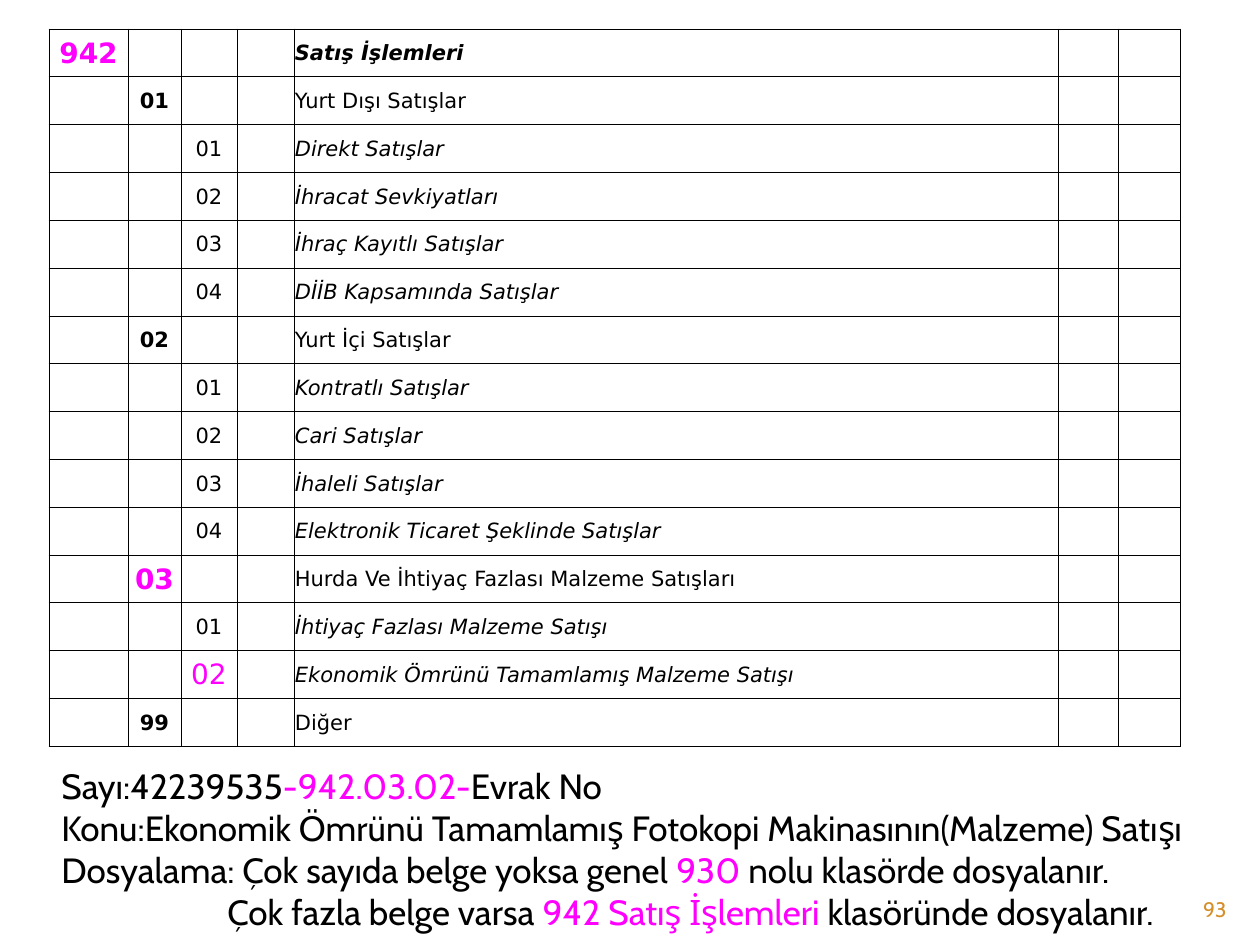
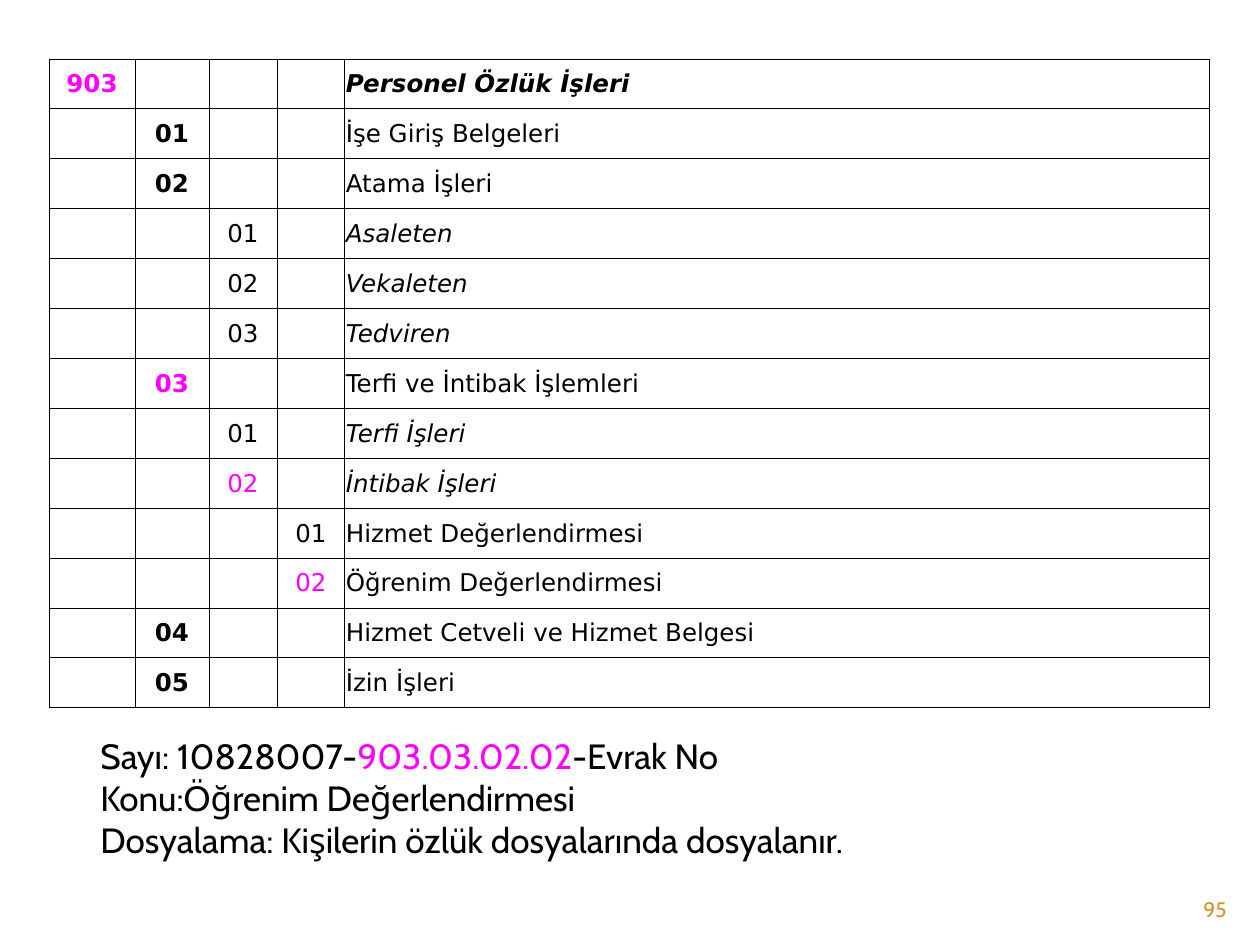
from dataclasses import dataclass

from lxml import etree
from pptx import Presentation
from pptx import util as u
from pptx.dml import color
from pptx.enum import text
from pptx.oxml import ns

EMU_PER_PX = u.Inches(1) / 126


@dataclass(frozen=True)
class Theme:
    ink: str = "000000"
    accent: str = "FF00FF"
    paper: str = "FFFFFF"
    number: str = "D48F29"
    table_font: str = "DejaVu Sans"
    text_font: str = "Cabin"
    note_size: int = 20
    number_size: int = 12
    border: float = 0.5


@dataclass(frozen=True)
class Area:
    left: int
    top: int
    width: int
    height: int


@dataclass(frozen=True)
class Entry:
    level: int
    code: str
    label: str
    marked: bool = False


@dataclass(frozen=True)
class FilePlan:
    left: int
    top: int
    height: int
    columns: tuple[int, ...]
    size: int
    marked_size: int
    entries: tuple[Entry, ...]


@dataclass(frozen=True)
class Span:
    words: str
    marked: bool = False


@dataclass(frozen=True)
class Line:
    spans: tuple[Span, ...]
    indent: int = 0


@dataclass(frozen=True)
class Sheet:
    number: int
    plan: FilePlan
    note_area: Area
    notes: tuple[Line, ...]


THEME = Theme()
NUMBER_AREA = Area(1134, 892, 105, 34)
LABEL_COLUMN = 4

SHEETS = (
    Sheet(
        93,
        FilePlan(49, 29, 718, (79, 53, 56, 57, 764, 61, 62), 12, 16, (
            Entry(0, "942", "Satış İşlemleri", True),
            Entry(1, "01", "Yurt Dışı Satışlar"),
            Entry(2, "01", "Direkt Satışlar"),
            Entry(2, "02", "İhracat Sevkiyatları"),
            Entry(2, "03", "İhraç Kayıtlı Satışlar"),
            Entry(2, "04", "DİİB Kapsamında Satışlar"),
            Entry(1, "02", "Yurt İçi Satışlar"),
            Entry(2, "01", "Kontratlı Satışlar"),
            Entry(2, "02", "Cari Satışlar"),
            Entry(2, "03", "İhaleli Satışlar"),
            Entry(2, "04", "Elektronik Ticaret Şeklinde Satışlar"),
            Entry(1, "03", "Hurda Ve İhtiyaç Fazlası Malzeme Satışları", True),
            Entry(2, "01", "İhtiyaç Fazlası Malzeme Satışı"),
            Entry(2, "02", "Ekonomik Ömrünü Tamamlamış Malzeme Satışı", True),
            Entry(1, "99", "Diğer"),
        )),
        Area(49, 758, 1172, 183),
        (
            Line((Span("Sayı:42239535"), Span("-942.03.02-", True), Span("Evrak No"))),
            Line((Span("Konu:Ekonomik Ömrünü Tamamlamış Fotokopi Makinasının(Malzeme) Satışı"),)),
            Line((Span("Dosyalama: Çok sayıda belge yoksa genel "), Span("930 ", True),
                  Span("nolu klasörde dosyalanır."))),
            Line((Span("Çok fazla belge varsa "), Span("942 Satış İşlemleri ", True),
                  Span("klasöründe dosyalanır.")), 166),
        ),
    ),
    Sheet(
        95,
        FilePlan(49, 59, 649, (86, 74, 68, 68, 865), 14, 14, (
            Entry(0, "903", "Personel Özlük İşleri", True),
            Entry(1, "01", "İşe Giriş Belgeleri"),
            Entry(1, "02", "Atama İşleri"),
            Entry(2, "01", "Asaleten"),
            Entry(2, "02", "Vekaleten"),
            Entry(2, "03", "Tedviren"),
            Entry(1, "03", "Terfi ve İntibak İşlemleri", True),
            Entry(2, "01", "Terfi İşleri"),
            Entry(2, "02", "İntibak İşleri", True),
            Entry(3, "01", "Hizmet Değerlendirmesi"),
            Entry(3, "02", "Öğrenim Değerlendirmesi", True),
            Entry(1, "04", "Hizmet Cetveli ve Hizmet Belgesi"),
            Entry(1, "05", "İzin İşleri"),
        )),
        Area(88, 728, 1033, 140),
        (
            Line((Span("Sayı: 10828007-"), Span("903.03.02.02", True), Span("-Evrak No"))),
            Line((Span("Konu:Öğrenim Değerlendirmesi"),)),
            Line((Span("Dosyalama: Kişilerin özlük dosyalarında dosyalanır."),)),
        ),
    ),
)


def px(length: int) -> u.Emu:
    return u.Emu(round(length * EMU_PER_PX))


def tone(marked: bool) -> str:
    return THEME.accent if marked else THEME.ink


def style(font, name: str, size: int, ink: str, bold: bool = False, italic: bool = False) -> None:
    font.name = name
    font.size = u.Pt(size)
    font.bold = bold
    font.italic = italic
    font.color.rgb = color.RGBColor.from_string(ink)


def frame_cell(cell) -> None:
    properties = cell._tc.get_or_add_tcPr()
    for side in ("lnL", "lnR", "lnT", "lnB"):
        line = etree.SubElement(properties, ns.qn(f"a:{side}"), w=str(u.Pt(THEME.border)))
        fill = etree.SubElement(line, ns.qn("a:solidFill"))
        etree.SubElement(fill, ns.qn("a:srgbClr"), val=THEME.ink)
    cell.fill.solid()
    cell.fill.fore_color.rgb = color.RGBColor.from_string(THEME.paper)
    cell.margin_left = cell.margin_right = cell.margin_top = px(1)
    cell.margin_bottom = 0
    cell.vertical_anchor = text.MSO_ANCHOR.MIDDLE


def draw_plan(page, plan: FilePlan) -> None:
    table = page.shapes.add_table(
        len(plan.entries), len(plan.columns),
        px(plan.left), px(plan.top), px(sum(plan.columns)), px(plan.height),
    ).table
    table.first_row = table.horz_banding = False
    for column, width in zip(table.columns, plan.columns):
        column.width = px(width)
    for cell in table.iter_cells():
        frame_cell(cell)
    for row, entry in enumerate(plan.entries):
        code = table.cell(row, entry.level)
        code.text = entry.code
        para = code.text_frame.paragraphs[0]
        para.alignment = text.PP_ALIGN.CENTER
        size = plan.marked_size if entry.marked else plan.size
        style(para.font, THEME.table_font, size, tone(entry.marked), bold=entry.level < 2)

        label = table.cell(row, LABEL_COLUMN)
        label.text = entry.label
        style(label.text_frame.paragraphs[0].font, THEME.table_font, plan.size, THEME.ink,
              bold=entry.level == 0, italic=entry.level in (0, 2))


def add_text(page, area: Area):
    box = page.shapes.add_textbox(px(area.left), px(area.top), px(area.width), px(area.height))
    box.text_frame.word_wrap = True
    return box.text_frame


def draw_notes(page, area: Area, lines: tuple[Line, ...]) -> None:
    frame = add_text(page, area)
    for index, line in enumerate(lines):
        para = frame.add_paragraph() if index else frame.paragraphs[0]
        style(para.font, THEME.text_font, THEME.note_size, THEME.ink)
        if line.indent:
            para._p.get_or_add_pPr().set("marL", str(px(line.indent)))
        for span in line.spans:
            run = para.add_run()
            run.text = span.words
            if span.marked:
                run.font.color.rgb = color.RGBColor.from_string(THEME.accent)


def draw_number(page, number: int) -> None:
    frame = add_text(page, NUMBER_AREA)
    frame.vertical_anchor = text.MSO_ANCHOR.MIDDLE
    para = frame.paragraphs[0]
    para.text = str(number)
    para.alignment = text.PP_ALIGN.RIGHT
    style(para.font, THEME.text_font, THEME.number_size, THEME.number)


def main() -> None:
    deck = Presentation()
    deck.slide_width, deck.slide_height = u.Inches(10), u.Inches(7.5)
    blank = deck.slide_layouts.get_by_name("Blank")
    for sheet in SHEETS:
        page = deck.slides.add_slide(blank)
        draw_number(page, sheet.number)
        draw_plan(page, sheet.plan)
        draw_notes(page, sheet.note_area, sheet.notes)
    deck.save("out.pptx")


if __name__ == "__main__":
    main()
